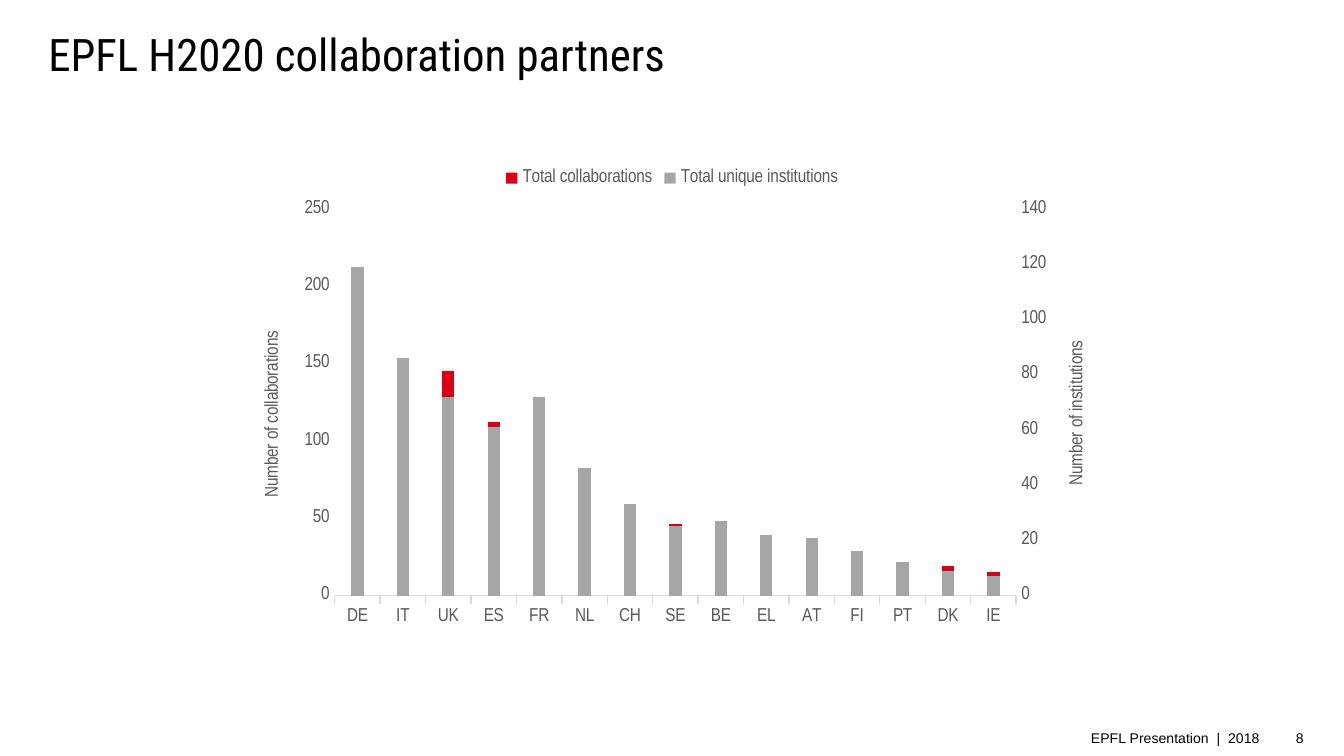
from copy import deepcopy
from dataclasses import dataclass

from lxml import etree
from pptx import Presentation
from pptx import util as u
from pptx.chart.data import CategoryChartData
from pptx.dml.color import RGBColor
from pptx.enum import chart as ch
from pptx.enum import text
from pptx.oxml.ns import qn


@dataclass(frozen=True)
class Theme:
    title_font: str = "Roboto Condensed"
    chart_font: str = "Arial Narrow"
    footer_font: str = "Arial"
    title_size: float = 24
    chart_size: float = 10
    footer_size: float = 7.5
    ink: str = "000000"
    label: str = "595959"
    rule: str = "D9D9D9"
    collaborations: str = "D70015"
    institutions: str = "A6A6A6"


THEME = Theme()
WIDTH = u.Inches(10)
HEIGHT = WIDTH * 9 // 16

COUNTRIES = "DE IT UK ES FR NL CH SE BE EL AT FI PT DK IE".split()
COLLABORATIONS = [203, 150, 145, 112, 109, 73, 56, 46, 40, 35, 29, 29, 20, 19, 15]
INSTITUTIONS = [119, 86, 72, 61, 72, 46, 33, 25, 27, 22, 21, 16, 12, 9, 7]


def percent_box(left, top, width, height):
    sides = ((left, WIDTH), (top, HEIGHT), (width, WIDTH), (height, HEIGHT))
    return [round(percent * side / 100) for percent, side in sides]


def style(font, name, size, color):
    font.name, font.size, font.bold = name, u.Pt(size), False
    font.color.rgb = RGBColor.from_string(color)


def place_title(slide, box, wording):
    title = slide.shapes.title
    title.left, title.top, title.width, title.height = box
    frame = title.text_frame
    frame.text = wording
    frame.vertical_anchor = text.MSO_ANCHOR.MIDDLE
    paragraph = frame.paragraphs[0]
    paragraph.alignment = text.PP_ALIGN.LEFT
    style(paragraph.runs[0].font, THEME.title_font, THEME.title_size, THEME.ink)


def place_footer(slide, box, number_share, wording, number):
    left, top, width, height = box
    number_width = round(width * number_share)
    split = left + width - number_width
    parts = ((number, split, number_width), (wording, left, split - left))
    for content, part_left, part_width in parts:
        frame = slide.shapes.add_textbox(part_left, top, part_width, height).text_frame
        frame.word_wrap = True
        frame.vertical_anchor = text.MSO_ANCHOR.MIDDLE
        frame.margin_left = frame.margin_right = u.Inches(0.05)
        frame.margin_top = frame.margin_bottom = u.Inches(0.05)
        frame.text = content
        paragraph = frame.paragraphs[0]
        paragraph.alignment = text.PP_ALIGN.RIGHT
        style(paragraph.runs[0].font, THEME.footer_font, THEME.footer_size, THEME.ink)


def set_layout(parent, index, inner=False, **percents):
    layout = parent.find(qn("c:layout"))
    if layout is None:
        layout = etree.Element(qn("c:layout"))
        parent.insert(index, layout)
    manual = etree.SubElement(layout, qn("c:manualLayout"))
    settings = {"layoutTarget": "inner"} if inner else {}
    settings |= {"xMode": "edge", "yMode": "edge"}
    settings |= {side: percent / 100 for side, percent in percents.items()}
    for tag, value in settings.items():
        etree.SubElement(manual, qn(f"c:{tag}")).set("val", str(value))


def set_value(element, tag, value):
    element.find(qn(f"c:{tag}")).set("val", str(value))


def format_axes(chart):
    category, value = chart.category_axis, chart.value_axis
    for axis in (category, value):
        axis.has_major_gridlines = False
        axis.minor_tick_mark = ch.XL_TICK_MARK.NONE
        style(axis.tick_labels.font, THEME.chart_font, THEME.chart_size, THEME.label)
    category.major_tick_mark = ch.XL_TICK_MARK.OUTSIDE
    category.format.line.color.rgb = RGBColor.from_string(THEME.rule)
    category.format.line.width = u.Pt(0.75)
    value.minimum_scale, value.maximum_scale, value.major_unit = 0, 250, 50
    value.major_tick_mark = ch.XL_TICK_MARK.NONE
    value.format.line.fill.background()
    value.tick_labels.number_format = "General"
    value.tick_labels.number_format_is_linked = False
    frame = value.axis_title.text_frame
    frame.text = "Number of collaborations"
    style(frame.paragraphs[0].runs[0].font, THEME.chart_font, THEME.chart_size, THEME.label)
    body = value._element.find(qn("c:title")).find(f".//{qn('a:bodyPr')}")
    body.set("rot", "-5400000")
    body.set("vert", "horz")


def add_right_axis(chart):
    plot_area = chart._chartSpace.find(f".//{qn('c:plotArea')}")
    bars = plot_area.find(qn("c:barChart"))
    category, value = plot_area.find(qn("c:catAx")), plot_area.find(qn("c:valAx"))
    right_bars, right_category, right_value = map(deepcopy, (bars, category, value))
    bars.remove(bars.findall(qn("c:ser"))[1])
    right_bars.remove(right_bars.findall(qn("c:ser"))[0])
    category_id, value_id = "50010", "50020"
    for element, new_id in zip(right_bars.findall(qn("c:axId")), (category_id, value_id)):
        element.set("val", new_id)
    for axis, own, crossing in (
        (right_category, category_id, value_id),
        (right_value, value_id, category_id),
    ):
        set_value(axis, "axId", own)
        set_value(axis, "crossAx", crossing)
    set_value(right_category, "delete", 1)
    set_value(right_value, "axPos", "r")
    set_value(right_value, "crosses", "max")
    set_value(right_value.find(qn("c:scaling")), "max", 140)
    set_value(right_value, "majorUnit", 20)
    right_value.find(f".//{qn('a:t')}").text = "Number of institutions"
    bars.addnext(right_bars)
    value.addnext(right_value)
    right_value.addnext(right_category)
    set_layout(value.find(qn("c:title")), 1, x=2.8, y=36)
    set_layout(right_value.find(qn("c:title")), 1, x=94.9, y=38)
    set_layout(plot_area, 0, inner=True, x=11.4, y=11.3, w=78, h=80.4)


def place_chart(slide, box):
    data = CategoryChartData()
    data.categories = COUNTRIES
    data.add_series("Total collaborations", COLLABORATIONS)
    data.add_series("Total unique institutions", INSTITUTIONS)
    chart = slide.shapes.add_chart(ch.XL_CHART_TYPE.COLUMN_CLUSTERED, *box, data).chart
    style(chart.font, THEME.chart_font, THEME.chart_size, THEME.ink)
    chart.has_title = False
    chart.has_legend = True
    chart.legend.position = ch.XL_LEGEND_POSITION.TOP
    chart.legend.include_in_layout = False
    style(chart.legend.font, THEME.chart_font, THEME.chart_size, THEME.label)
    plot = chart.plots[0]
    plot.gap_width = 269
    plot.vary_by_categories = False
    for series, color in zip(plot.series, (THEME.collaborations, THEME.institutions)):
        series.format.fill.solid()
        series.format.fill.fore_color.rgb = RGBColor.from_string(color)
        series.invert_if_negative = False
    format_axes(chart)
    add_right_axis(chart)


def main():
    presentation = Presentation()
    presentation.slide_width, presentation.slide_height = WIDTH, HEIGHT
    slide = presentation.slides.add_slide(presentation.slide_layouts.get_by_name("Title Only"))
    footer_box = percent_box(15.6, 95.5, 81.9, 4.27)
    place_footer(slide, footer_box, 0.04, "EPFL Presentation  |  2018", "8")
    place_title(slide, percent_box(2.6, 2.67, 95, 8.89), "EPFL H2020 collaboration partners")
    place_chart(slide, percent_box(17.5, 20.45, 65, 63.64))
    presentation.save("out.pptx")


if __name__ == "__main__":
    main()
